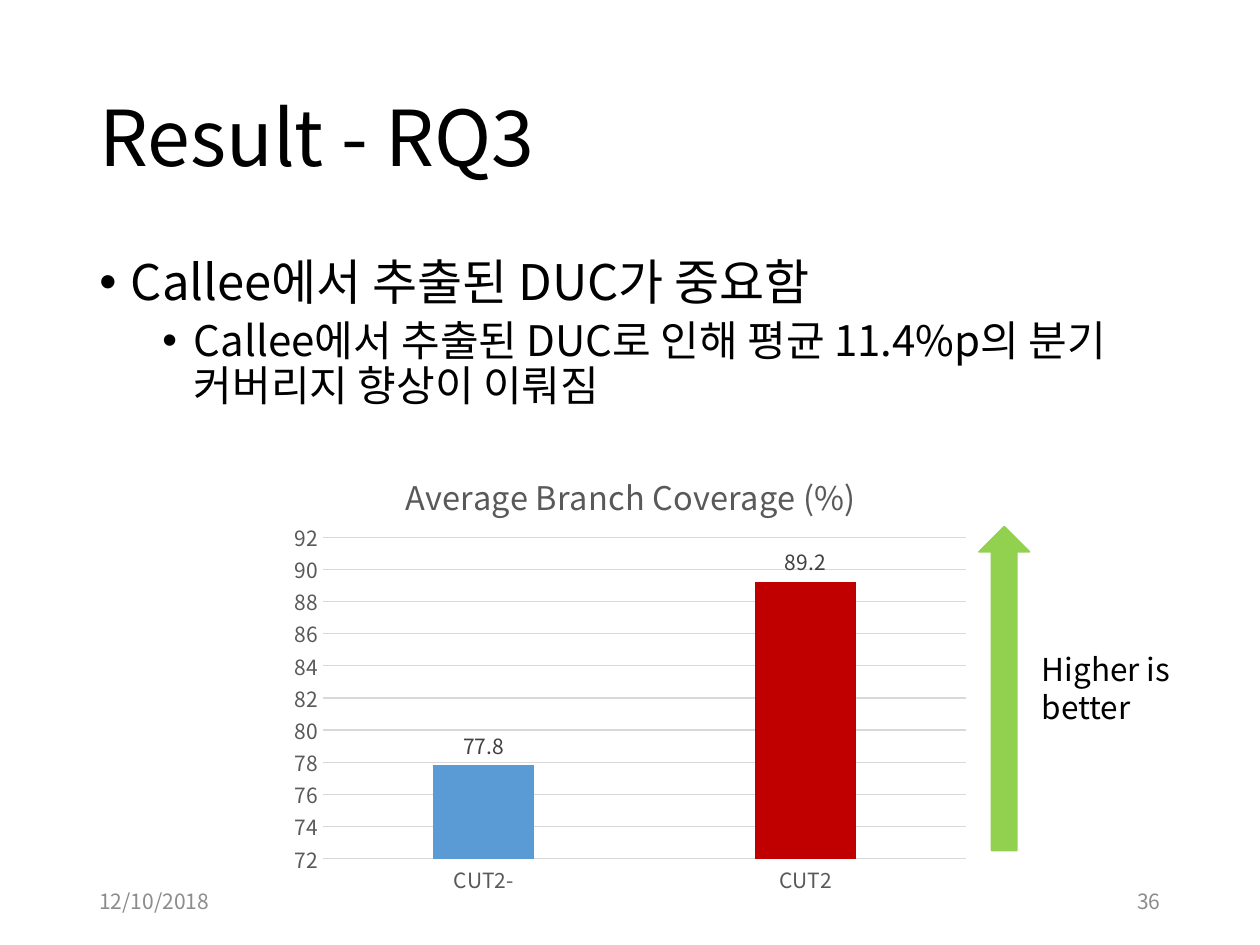
from lxml import etree
from pptx import Presentation
from pptx.chart.data import CategoryChartData
from pptx.dml.color import RGBColor
from pptx.enum.chart import XL_CHART_TYPE, XL_LABEL_POSITION, XL_TICK_MARK
from pptx.enum.shapes import MSO_SHAPE
from pptx.enum.text import MSO_ANCHOR, PP_ALIGN
from pptx.oxml import parse_xml
from pptx.oxml.ns import nsdecls, qn
from pptx.util import Inches, Pt

COLUMNS = XL_CHART_TYPE.COLUMN_CLUSTERED
OUTSIDE_END = XL_LABEL_POSITION.OUTSIDE_END
NO_TICK = XL_TICK_MARK.NONE
UP_ARROW = MSO_SHAPE.UP_ARROW
TOP, MIDDLE = MSO_ANCHOR.TOP, MSO_ANCHOR.MIDDLE
LEFT, RIGHT = PP_ALIGN.LEFT, PP_ALIGN.RIGHT

FONT = "Noto Sans CJK KR"
BLACK = RGBColor(0x00, 0x00, 0x00)
FOOTER_GRAY = RGBColor(0x8C, 0x8C, 0x8C)
AXIS_GRAY = RGBColor(0x59, 0x59, 0x59)
LABEL_GRAY = RGBColor(0x40, 0x40, 0x40)
GRID_GRAY = RGBColor(0xD9, 0xD9, 0xD9)
BLUE = RGBColor(0x5B, 0x9B, 0xD5)
RED = RGBColor(0xC0, 0x00, 0x00)
GREEN = RGBColor(0x92, 0xD0, 0x50)


def apply(target, values):
    for name, value in values.items():
        setattr(target, name, value)


def style_font(font, size, color):
    apply(font, {"name": FONT, "size": Pt(size), "bold": False})
    font.color.rgb = color


def write(para, text, size, color=BLACK):
    span = para.add_run()
    span.text = text
    style_font(span.font, size, color)
    east_asian = etree.SubElement(span.font._element, qn("a:ea"))
    east_asian.set("typeface", FONT)


def place(shape, box):
    apply(shape, dict(zip(("left", "top", "width", "height"), map(Inches, box))))


def add_text(page, box, lines, size, color=BLACK, anchor=TOP, align=LEFT, wrap=True):
    shape = page.shapes.add_textbox(*map(Inches, box))
    frame = shape.text_frame
    apply(frame, {"word_wrap": wrap, "vertical_anchor": anchor})
    for index, line in enumerate(lines):
        para = frame.add_paragraph() if index else frame.paragraphs[0]
        para.alignment = align
        write(para, line, size, color)


def add_title(page, box, text):
    title = page.shapes.title
    place(title, box)
    title.text_frame.vertical_anchor = MIDDLE
    para = title.text_frame.paragraphs[0]
    apply(para, {"alignment": LEFT, "line_spacing": 0.9})
    write(para, text, 44)


def add_bullets(page, box, items):
    frame = page.shapes.add_textbox(*map(Inches, box)).text_frame
    frame.word_wrap = True
    for index, (level, size, before, text) in enumerate(items):
        para = frame.add_paragraph() if index else frame.paragraphs[0]
        apply(para, {"level": level, "space_before": Pt(before), "line_spacing": 0.9})
        write(para, text, size)
        properties = para._p.get_or_add_pPr()
        properties.set("marL", str(Inches(0.25 + 0.5 * level)))
        properties.set("indent", str(Inches(-0.25)))
        etree.SubElement(properties, qn("a:buFont")).set("typeface", "Arial")
        etree.SubElement(properties, qn("a:buChar")).set("char", "•")


def chart_layout(target, **values):
    entries = "".join(f'<c:{name} val="{value}"/>' for name, value in values.items())
    return parse_xml(
        f"<c:layout {nsdecls('c')}><c:manualLayout>{target}"
        '<c:xMode val="edge"/><c:yMode val="edge"/>'
        f"{entries}</c:manualLayout></c:layout>"
    )


def replace_layout(parent, layout, position):
    for old in parent.findall(qn("c:layout")):
        parent.remove(old)
    parent.insert(position, layout)


def style_line(line, color, width=0.75):
    line.color.rgb = color
    line.width = Pt(width)


def add_coverage_chart(page, box):
    data = CategoryChartData()
    data.categories = ["CUT2-", "CUT2"]
    data.add_series("Series 1", [77.8, 89.2])
    chart = page.shapes.add_chart(COLUMNS, *map(Inches, box), data).chart
    style_font(chart.font, 10, BLACK)
    apply(chart, {"has_legend": False, "has_title": True})

    title = chart.chart_title
    write(title.text_frame.paragraphs[0], "Average Branch Coverage (%)", 18.6, AXIS_GRAY)
    replace_layout(title._element, chart_layout("", x=0.17, y=0.06), 1)
    plot_area = chart._chartSpace.chart.plotArea
    inner = '<c:layoutTarget val="inner"/>'
    replace_layout(plot_area, chart_layout(inner, x=0.06, y=0.22, w=0.92, h=0.69), 0)

    for axis in (chart.category_axis, chart.value_axis):
        apply(axis, {"major_tick_mark": NO_TICK, "minor_tick_mark": NO_TICK})
        style_font(axis.tick_labels.font, 12, AXIS_GRAY)
    style_line(chart.category_axis.format.line, GRID_GRAY)
    values = chart.value_axis
    apply(values, {"minimum_scale": 72, "maximum_scale": 92, "major_unit": 2})
    values.format.line.fill.background()
    style_line(values.major_gridlines.format.line, GRID_GRAY)

    plot = chart.plots[0]
    apply(plot, {"gap_width": 219, "overlap": -27,
                 "vary_by_categories": False, "has_data_labels": True})
    apply(plot.data_labels, {"show_value": True, "position": OUTSIDE_END})
    style_font(plot.data_labels.font, 12, LABEL_GRAY)
    series = plot.series[0]
    for bar, color in ((series, BLUE), (series.points[1], RED)):
        bar.format.fill.solid()
        bar.format.fill.fore_color.rgb = color


def add_direction_hint(page, box):
    left, top, width, height = box
    arrow_width, text_height = 0.4, 0.71
    arrow_box = left, top, arrow_width, height
    arrow = page.shapes.add_shape(UP_ARROW, *map(Inches, arrow_box))
    arrow.shadow.inherit = False
    arrow.fill.solid()
    arrow.fill.fore_color.rgb = GREEN
    style_line(arrow.line, GREEN, 1)
    text_box = (left + arrow_width, top + (height - text_height) / 2,
                width - arrow_width, text_height)
    add_text(page, text_box, ["Higher is", "better"], 18, wrap=False)


def add_footer(page, box):
    left, top, width, height = box
    part = 2.25
    for x, text, align in ((left, "12/10/2018", LEFT), (left + width - part, "36", RIGHT)):
        add_text(page, (x, top, part, height), [text], 12, FOOTER_GRAY, MIDDLE, align)


def main():
    deck = Presentation()
    apply(deck, {"slide_width": Inches(10), "slide_height": Inches(7.5)})
    page = deck.slides.add_slide(deck.slide_layouts[5])
    margin, width = 0.69, 8.62
    add_title(page, (margin, 0.4, width, 1.45), "Result - RQ3")
    add_bullets(page, (margin, 2, width, 4.76), [
        (0, 28, 10, "Callee에서 추출된 DUC가 중요함"),
        (1, 24, 5, "Callee에서 추출된 DUC로 인해 평균 11.4%p의 분기 커버리지 향상이 이뤄짐"),
    ])
    add_footer(page, (margin, 6.95, width, 0.4))
    add_coverage_chart(page, (2.23, 3.45, 5.55, 3.7))
    add_direction_hint(page, (7.77, 4.18, 1.63, 2.57))
    deck.save("out.pptx")


if __name__ == "__main__":
    main()
